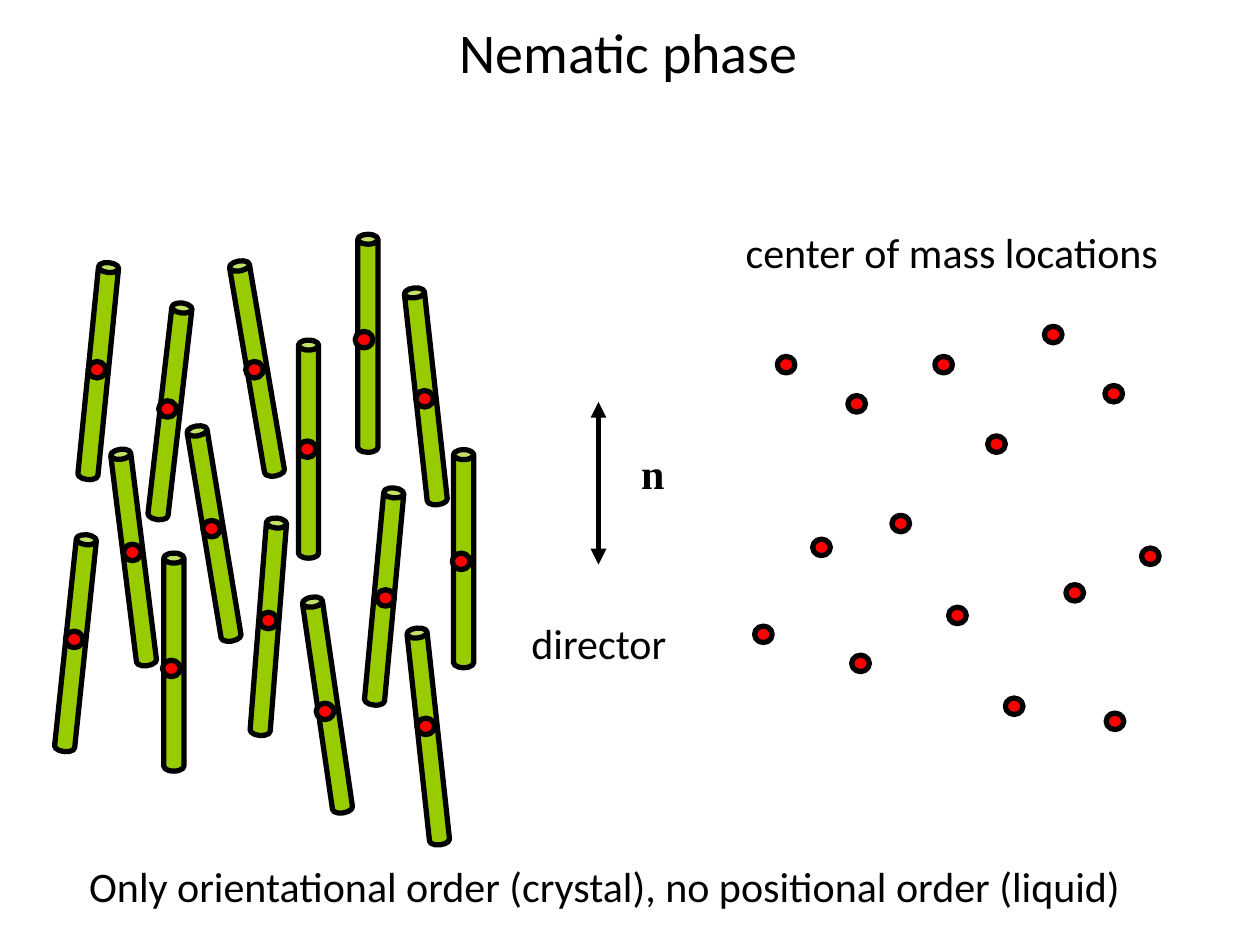
from lxml import etree
from pptx import Presentation
from pptx.dml.color import RGBColor
from pptx.enum.shapes import MSO_CONNECTOR as Connector, MSO_SHAPE as Shape
from pptx.enum.text import MSO_ANCHOR as Anchor, MSO_AUTO_SIZE as AutoSize, PP_ALIGN as Align
from pptx.oxml.ns import qn
from pptx.util import Pt

ROD_WIDTH, ROD_HEIGHT = 11.5, 124.6
CENTER_WIDTH, CENTER_HEIGHT = 10.1, 9.4
# Shift from the molecules to the plot of their centers alone
PLOT_DX, PLOT_DY = 393.8, -2.9

# Rod left, rod top, tilt in degrees, center mark left, center mark top
MOLECULES = [
    (50.4, 149.8, 5.7, 50.4, 206.6),
    (91.4, 172.8, 6.6, 90.7, 229),
    (141.1, 148.3, -9.7, 140.4, 206.6),
    (204.5, 133.9, 0, 203, 189.4),
    (70.6, 256.3, -7.1, 70.6, 311),
    (147.6, 295.9, 4.5, 148.3, 349.9),
    (116.6, 242.6, -9.4, 115.9, 297.4),
    (170.6, 194.4, 0, 170.6, 252),
    (213.8, 278.6, 5.3, 215.3, 337),
    (259.2, 257, 0, 258.5, 316.1),
    (237.6, 164.2, -6.3, 237.6, 223.2),
    (37.4, 305.3, 6, 37.4, 360.7),
    (93.6, 316.1, 0, 92.9, 377.3),
    (181.4, 340.6, -8.3, 180.7, 401.8),
    (239, 358.6, -6.2, 238.3, 410.4),
]


def color(code):
    return RGBColor.from_string(code)


class NematicSlide:
    ink = "000000"
    rod_fill = "99CC00"
    center_fill = "FF0000"
    line_width = 3
    font_name = "Calibri"
    font_size = 24

    def __init__(self, slide):
        self.slide = slide
        self.shapes = slide.shapes

    def outline(self, line):
        line.color.rgb = color(self.ink)
        line.width = Pt(self.line_width)

    def solid(self, shapes, kind, left, top, width, height, fill):
        shape = shapes.add_shape(kind, Pt(left), Pt(top), Pt(width), Pt(height))
        shape.shadow.inherit = False
        shape.fill.solid()
        shape.fill.fore_color.rgb = color(fill)
        self.outline(shape.line)
        return shape

    def rod(self, group, left, top, tilt):
        rod = self.solid(group.shapes, Shape.CAN, left, top,
                         ROD_WIDTH, ROD_HEIGHT, self.rod_fill)
        rod.adjustments[0] = 0.494
        rod.rotation = tilt

    def center(self, left, top):
        self.solid(self.shapes, Shape.OVAL, left, top,
                   CENTER_WIDTH, CENTER_HEIGHT, self.center_fill)

    def double_arrow(self, x1, y1, x2, y2):
        arrow = self.shapes.add_connector(
            Connector.STRAIGHT, Pt(x1), Pt(y1), Pt(x2), Pt(y2))
        self.outline(arrow.line)
        line = arrow.line._get_or_add_ln()
        for end in ("a:headEnd", "a:tailEnd"):
            etree.SubElement(line, qn(end), type="triangle")
        etree.SubElement(arrow._element.spPr, qn("a:effectLst"))

    def text(self, words, left, top, width, height, size=None, font_name=None,
             bold=False, wrap=False, align=Align.LEFT, anchor=Anchor.TOP):
        box = self.shapes.add_textbox(Pt(left), Pt(top), Pt(width), Pt(height))
        frame = box.text_frame
        frame.text = words
        frame.word_wrap = wrap
        frame.vertical_anchor = anchor
        frame.auto_size = AutoSize.NONE if anchor == Anchor.MIDDLE else AutoSize.SHAPE_TO_FIT_TEXT
        paragraph = frame.paragraphs[0]
        paragraph.alignment = align
        font = paragraph.runs[0].font
        font.name = font_name or self.font_name
        font.size = Pt(size or self.font_size)
        font.bold = bold
        font.color.rgb = color(self.ink)


def main():
    deck = Presentation()
    deck.slide_width, deck.slide_height = Pt(720), Pt(540)
    nematic = NematicSlide(deck.slides.add_slide(deck.slide_layouts[6]))

    rods = nematic.shapes.add_group_shape()
    for left, top, tilt, _, _ in MOLECULES:
        nematic.rod(rods, left, top, tilt)

    nematic.double_arrow(342, 322.6, 342, 229.7)
    nematic.text("n", 359.3, 252, 28.1, 36, font_name="Times New Roman", bold=True)

    for dx, dy in ((0, 0), (PLOT_DX, PLOT_DY)):
        for _, _, _, left, top in MOLECULES:
            nematic.center(left + dx, top + dy)

    nematic.text("director", 296.6, 349.2, 92.2, 36)
    nematic.text("Only orientational order (crystal), no positional order (liquid)",
                 43.9, 488.2, 609.1, 36)
    nematic.text("center of mass locations", 419, 126, 273.6, 36, wrap=True)
    nematic.text("Nematic phase", 53.3, 0, 612, 58.3, size=32, wrap=True,
                 align=Align.CENTER, anchor=Anchor.MIDDLE)

    deck.save("out.pptx")


if __name__ == "__main__":
    main()
